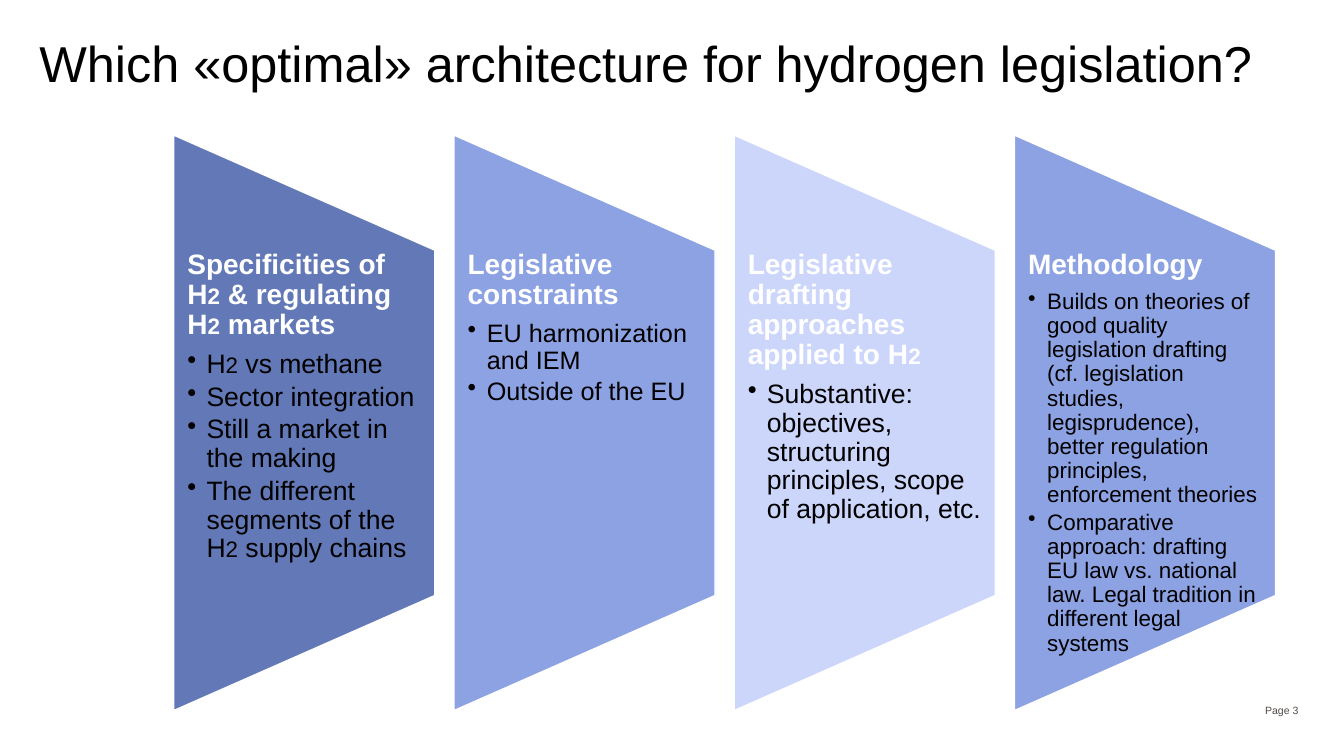
from dataclasses import dataclass

from lxml.etree import SubElement
from pptx import Presentation
from pptx.dml.color import RGBColor
from pptx.enum.shapes import MSO_SHAPE
from pptx.enum.text import MSO_ANCHOR, PP_ALIGN
from pptx.oxml.ns import qn
from pptx.slide import Slide
from pptx.text.text import TextFrame
from pptx.util import Inches, Length, Pt

SLIDE_W, SLIDE_H = Inches(13.33), Inches(7.5)
FONT = "Arial"
BLACK = RGBColor(0x00, 0x00, 0x00)
WHITE = RGBColor(0xFF, 0xFF, 0xFF)
GREY = RGBColor(0x52, 0x4B, 0x48)
DARK_BLUE = RGBColor(0x63, 0x79, 0xB7)
MID_BLUE = RGBColor(0x8D, 0xA2, 0xE3)
PALE_BLUE = RGBColor(0xCC, 0xD6, 0xFB)

HEADING_SIZE = 20
SUBSCRIPT, SUBSCRIPT_SIZE = "2", 16


@dataclass
class Column:
    heading: str
    bullets: list[str]
    bullet_size: int
    fill: RGBColor


COLUMNS = [
    Column("Specificities of H2 & regulating H2 markets",
           ["H2 vs methane",
            "Sector integration",
            "Still a market in the making",
            "The different segments of the H2 supply chains"],
           19, DARK_BLUE),
    Column("Legislative constraints",
           ["EU harmonization and IEM", "Outside of the EU"],
           18, MID_BLUE),
    Column("Legislative drafting approaches applied to H2",
           ["Substantive: objectives, structuring principles, scope of "
            "application, etc."],
           19, PALE_BLUE),
    Column("Methodology",
           ["Builds on theories of good quality legislation drafting (cf. "
            "legislation studies, legisprudence), better regulation "
            "principles, enforcement theories",
            "Comparative approach: drafting EU law vs. national law. Legal "
            "tradition in different legal systems"],
           16, MID_BLUE),
]


def across(percent: float) -> Length:
    """Share of the slide's width."""
    return Length(round(SLIDE_W * percent / 100))


def down(percent: float) -> Length:
    """Share of the slide's height."""
    return Length(round(SLIDE_H * percent / 100))


FIRST_LEFT, COLUMN_PITCH, COLUMN_W = across(12.92), across(20.85), across(19.43)
TEXT_TOP, TEXT_H = down(33.07), down(45.6)
PANEL_H, PANEL_MIDDLE = down(76.13), down(55.93)
SIDE_INSET, BULLET_INDENT = across(1.02), across(1.43)


def add_text_frame(s: Slide, left: Length, top: Length, width: Length,
                   height: Length, side_inset: Length = Length(0)) -> TextFrame:
    tf = s.shapes.add_textbox(left, top, width, height).text_frame
    tf.word_wrap = True
    tf.margin_left = tf.margin_right = side_inset
    tf.margin_top = tf.margin_bottom = 0
    return tf


def add_line(s: Slide, text: str, size: float, color: RGBColor, left: Length,
             top: Length, width: Length, height: Length) -> TextFrame:
    """Add a box holding one paragraph in one style."""
    tf = add_text_frame(s, left, top, width, height)
    tf.text = text
    font = tf.paragraphs[0].runs[0].font
    font.name, font.size, font.color.rgb = FONT, Pt(size), color
    return tf


def add_paragraph(tf: TextFrame, text: str, size: int, color: RGBColor,
                  bullet: bool) -> None:
    """Write a paragraph whose subscript digits are smaller."""
    p = tf.add_paragraph() if bullet else tf.paragraphs[0]
    p.line_spacing = 0.9
    p.space_after = Pt(size * (0.15 if bullet else 0.35))
    if bullet:
        p.level = 1
        pPr = p._p.get_or_add_pPr()
        pPr.set("marL", str(BULLET_INDENT))
        pPr.set("indent", str(-BULLET_INDENT))
        SubElement(pPr, qn("a:buChar")).set("char", "•")
    for i, part in enumerate(text.split(SUBSCRIPT)):
        pieces = [(SUBSCRIPT, SUBSCRIPT_SIZE)] if i else []
        if part:
            pieces.append((part, size))
        for piece, piece_size in pieces:
            r = p.add_run()
            r.text = piece
            r.font.name, r.font.size = FONT, Pt(piece_size)
            r.font.bold = not bullet
            r.font.color.rgb = color


def add_column(s: Slide, column: Column, left: Length) -> None:
    # The panel is laid out lying down, then turned about its centre.
    sp = s.shapes.add_shape(
        MSO_SHAPE.FLOWCHART_MANUAL_OPERATION,
        left + (COLUMN_W - PANEL_H) // 2, PANEL_MIDDLE - COLUMN_W // 2,
        PANEL_H, COLUMN_W)
    sp.rotation = 270
    sp.shadow.inherit = False
    sp.fill.solid()
    sp.fill.fore_color.rgb = column.fill
    sp.line.color.rgb = WHITE
    sp.line.width = Pt(1)

    tf = add_text_frame(s, left, TEXT_TOP, COLUMN_W, TEXT_H, SIDE_INSET)
    add_paragraph(tf, column.heading, HEADING_SIZE, WHITE, bullet=False)
    for text in column.bullets:
        add_paragraph(tf, text, column.bullet_size, BLACK, bullet=True)


def main() -> None:
    prs = Presentation()
    prs.slide_width, prs.slide_height = SLIDE_W, SLIDE_H
    s = prs.slides.add_slide(prs.slide_layouts[6])

    title = add_line(s, "Which «optimal» architecture for hydrogen legislation?",
                     36, BLACK, across(2.93), down(5.2), across(94.13), down(7.87))
    title.paragraphs[0].line_spacing = 0.9

    for i, column in enumerate(COLUMNS):
        add_column(s, column, FIRST_LEFT + i * COLUMN_PITCH)

    page = add_line(s, "Page 3", 7.5, GREY,
                    across(92.42), down(91.33), across(4.95), down(5.33))
    page.vertical_anchor = MSO_ANCHOR.MIDDLE
    page.margin_right = across(0.75)
    page.paragraphs[0].alignment = PP_ALIGN.RIGHT

    prs.save("out.pptx")


if __name__ == "__main__":
    main()
